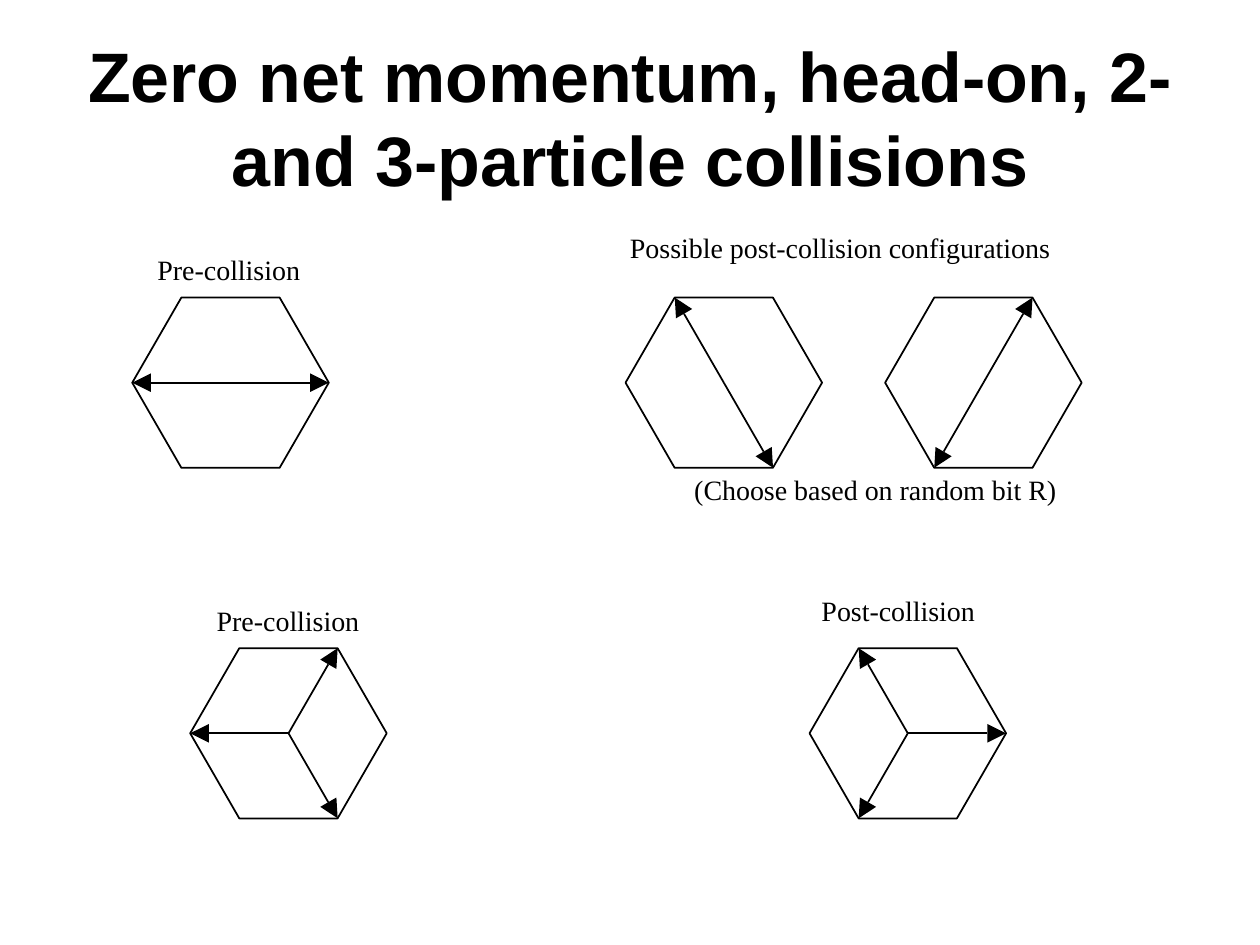
from math import cos, radians, sin

from lxml.etree import SubElement
from pptx import Presentation
from pptx.dml.color import RGBColor
from pptx.enum.shapes import MSO_CONNECTOR as Connector
from pptx.enum.text import MSO_ANCHOR as Anchor, MSO_AUTO_SIZE as AutoSize, PP_ALIGN as Align
from pptx.oxml.ns import qn
from pptx.util import Inches, Pt

BLACK = RGBColor(0, 0, 0)
WHITE = RGBColor(255, 255, 255)

TITLE = "Zero net momentum, head-on, 2- and 3-particle collisions"
TITLE_AREA = (5, 4, 90, 16.67)
TWO_PARTICLE_ROW, THREE_PARTICLE_ROW = 40.5, 77.6
COLLISIONS = [
    (18.3, TWO_PARTICLE_ROW, (180, 0)),
    (57.45, TWO_PARTICLE_ROW, (120, 300)),
    (78.05, TWO_PARTICLE_ROW, (240, 60)),
    (22.9, THREE_PARTICLE_ROW, (180, 60, 300)),
    (72.05, THREE_PARTICLE_ROW, (120, 0, 240)),
]
LABELS = [
    ("Pre-collision", 12.5, 26.7, 11.4),
    ("Possible post-collision configurations", 50, 24.4, 33.6),
    ("(Choose based on random bit R)", 55.1, 50, 28.9),
    ("Pre-collision", 17.2, 63.9, 11.4),
    ("Post-collision", 65.2, 62.8, 12.3),
]
LABEL_HEIGHT = 3.6

prs = Presentation()
prs.slide_width, prs.slide_height = Inches(10), Inches(7.5)
slide = prs.slides.add_slide(prs.slide_layouts[5])
shapes = slide.shapes

RADIUS = prs.slide_width * 0.078
HEAD_LENGTH = RADIUS * 0.19
HEAD_HALF_WIDTH = HEAD_LENGTH / 2


def across(percent):
    return round(prs.slide_width * percent / 100)


def down(percent):
    return round(prs.slide_height * percent / 100)


def from_center(center, angle, along, aside=0):
    x, y = center
    turn = radians(angle)
    return (round(x + along * cos(turn) - aside * sin(turn)),
            round(y - along * sin(turn) - aside * cos(turn)))


def set_format(target, values):
    for name, value in values.items():
        setattr(target, name, value)


def add_polygon(points, color, outlined):
    builder = shapes.build_freeform(*points[0])
    builder.add_line_segments(points[1:], close=True)
    polygon = builder.convert_to_shape()
    polygon.shadow.inherit = False
    polygon.fill.solid()
    polygon.fill.fore_color.rgb = color
    if outlined:
        polygon.line.color.rgb = BLACK
        polygon.line.width = Pt(1)
    else:
        polygon.line.fill.background()


def add_arrow(center, angle):
    base = RADIUS - HEAD_LENGTH
    shaft = shapes.add_connector(Connector.STRAIGHT, *center, *from_center(center, angle, base))
    shaft.line.color.rgb = BLACK
    shaft.line.width = Pt(1)
    SubElement(shaft._element.spPr, qn("a:effectLst"))
    add_polygon([from_center(center, angle, base, HEAD_HALF_WIDTH),
                 from_center(center, angle, RADIUS),
                 from_center(center, angle, base, -HEAD_HALF_WIDTH)], BLACK, False)


def write(box, text, frame_format, paragraph_format, font_format):
    frame = box.text_frame
    frame.text = text
    paragraph = frame.paragraphs[0]
    set_format(frame, frame_format)
    set_format(paragraph, paragraph_format)
    font = paragraph.runs[0].font
    set_format(font, font_format)
    font.color.rgb = BLACK


title = shapes.title
left, top, width, height = TITLE_AREA
set_format(title, {"left": across(left), "top": down(top),
                   "width": across(width), "height": down(height)})
write(title, TITLE,
      {"auto_size": AutoSize.NONE, "vertical_anchor": Anchor.MIDDLE, "word_wrap": True},
      {"alignment": Align.CENTER},
      {"name": "Arial", "size": Pt(40), "bold": True})

for column, row, directions in COLLISIONS:
    center = across(column), down(row)
    add_polygon([from_center(center, angle, RADIUS) for angle in range(0, 360, 60)], WHITE, True)
    for angle in directions:
        add_arrow(center, angle)

for text, left, top, width in LABELS:
    label = shapes.add_textbox(across(left), down(top), across(width), down(LABEL_HEIGHT))
    write(label, text,
          {"margin_left": 0, "margin_top": 0, "margin_right": 0, "margin_bottom": 0,
           "word_wrap": False, "auto_size": AutoSize.SHAPE_TO_FIT_TEXT},
          {"alignment": Align.LEFT},
          {"name": "Times New Roman", "size": Pt(16)})

prs.save("out.pptx")
